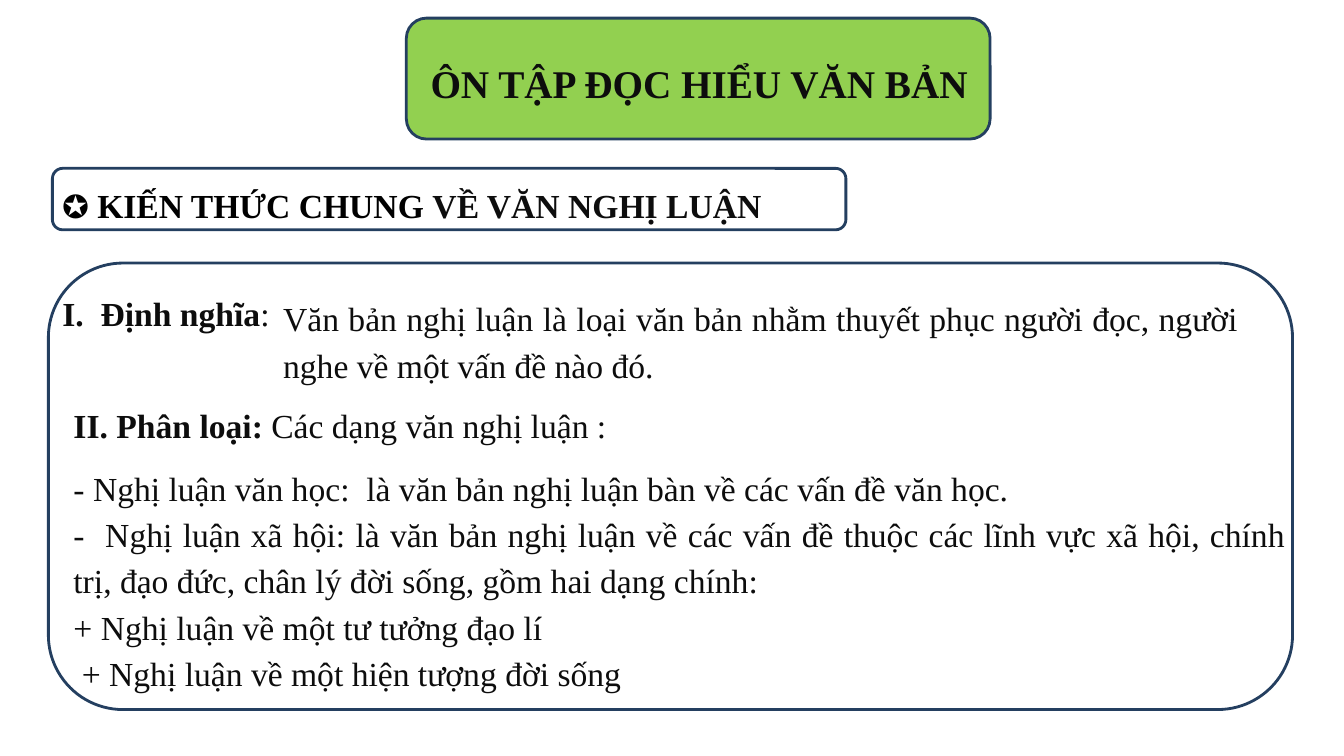
from pptx import Presentation
from pptx.util import Inches, Pt
from pptx.dml.color import RGBColor
from pptx.enum.shapes import MSO_SHAPE as Shape
from pptx.enum.text import PP_ALIGN as Align, MSO_ANCHOR as Anchor, MSO_AUTO_SIZE as Fit

INK = "0D0D0D"


def color(code):
    return RGBColor.from_string(code)


class Page:
    font = "Times New Roman"
    edge = "243F60"

    def __init__(self, deck):
        self.slide = deck.slides.add_slide(deck.slide_layouts[5])
        self.shapes = self.slide.shapes

    def panel(self, area, fill=None):
        box = self.shapes.add_shape(Shape.ROUNDED_RECTANGLE, *map(Inches, area))
        box.shadow.inherit = False
        box.adjustments[0] = 0.167
        if fill:
            box.fill.solid()
            box.fill.fore_color.rgb = color(fill)
        else:
            box.fill.background()
        box.line.color.rgb = color(self.edge)
        box.line.width = Pt(2)
        return box

    def typeset(self, frame, paras, size=24, align=Align.JUSTIFY,
                space=1.15, after=0, anchor=Anchor.TOP):
        frame.word_wrap = True
        frame.auto_size = Fit.NONE
        frame.vertical_anchor = anchor
        for i, runs in enumerate(paras):
            para = frame.add_paragraph() if i else frame.paragraphs[0]
            para.alignment = align
            para.line_spacing = space
            para.space_after = Pt(after)
            for text, bold, ink in runs:
                run = para.add_run()
                run.text = text
                run.font.name = self.font
                run.font.size = Pt(size)
                run.font.bold = bold
                run.font.color.rgb = color(ink)

    def text(self, area, paras, **style):
        box = self.shapes.add_textbox(*map(Inches, area))
        self.typeset(box.text_frame, paras, **style)

    def title(self, area, text, back):
        head = self.shapes.title
        head.left, head.top, head.width, head.height = map(Inches, area)
        self.typeset(head.text_frame, [[(text, True, INK)]],
                     size=28, align=Align.LEFT, after=10)
        head.element.addprevious(back.element)


def main():
    deck = Presentation()
    deck.slide_width, deck.slide_height = Inches(13.33), Inches(7.5)
    page = Page(deck)

    banner = page.panel((4.03, 0.18, 5.79, 1.2), "92D050")
    page.title((4.17, 0.47, 6.71, 0.6), "ÔN TẬP ĐỌC HIỂU VĂN BẢN", banner)

    page.panel((0.52, 1.67, 7.87, 0.61))
    page.text((0.52, 1.73, 7.87, 0.53), [[
        ("✪ ", False, "000000"),
        ("KIẾN THỨC CHUNG ", True, "000000"),
        ("VỀ VĂN NGHỊ LUẬN", True, INK),
    ]], after=10)

    page.panel((0.48, 2.61, 12.34, 4.43))
    page.text((0.52, 2.85, 2.4, 0.51), [[
        ("I.  Định nghĩa", True, INK), (":", False, INK),
    ]], align=Align.LEFT, space=1.0, anchor=Anchor.MIDDLE)
    page.text((2.71, 2.85, 9.67, 0.99), [[
        ("Văn bản nghị luận là loại văn bản nhằm thuyết phục người đọc, "
         "người nghe về một vấn đề nào đó.", False, INK),
    ]])
    page.text((0.63, 3.91, 6.78, 0.53), [[
        ("II. Phân loại:", True, INK),
        (" Các dạng văn nghị luận :", False, INK),
    ]])
    kinds = [
        "- Nghị luận văn học:  là văn bản nghị luận bàn về các vấn đề văn học.",
        "-  Nghị luận xã hội: là văn bản nghị luận về các vấn đề thuộc các lĩnh vực "
        "xã hội, chính trị, đạo đức, chân lý đời sống, gồm hai dạng chính:",
        "+ Nghị luận về một tư tưởng đạo lí",
        " + Nghị luận về một hiện tượng đời sống",
    ]
    page.text((0.63, 4.53, 12.22, 2.39), [[(kind, False, INK)] for kind in kinds])

    deck.save("out.pptx")


if __name__ == "__main__":
    main()
